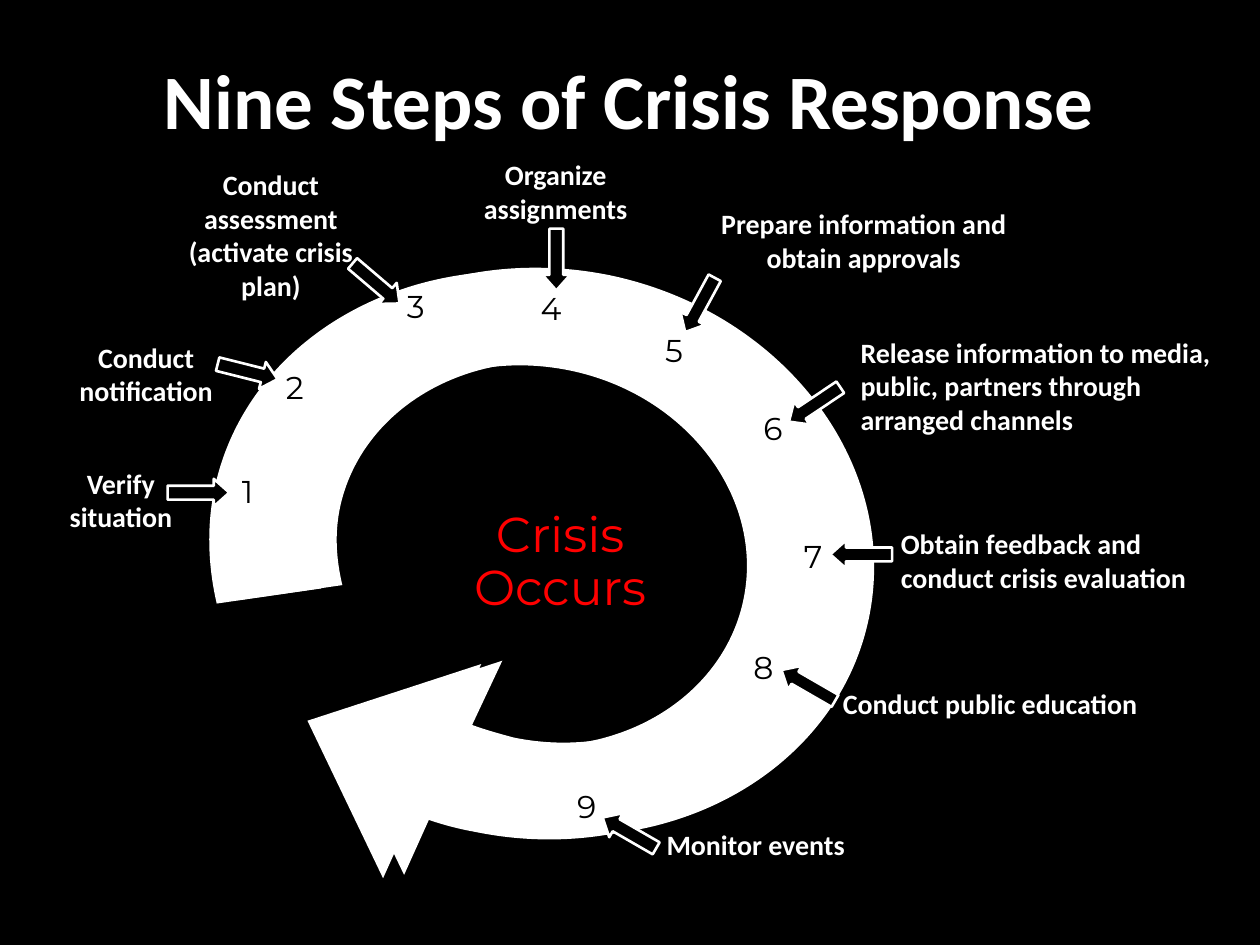
"""Build the crisis response cycle slide."""
from dataclasses import dataclass
from math import cos, radians, sin

from lxml.etree import SubElement
from pptx import Presentation
from pptx.dml.color import RGBColor
from pptx.enum.shapes import MSO_SHAPE
from pptx.enum.text import MSO_ANCHOR, MSO_AUTO_SIZE, PP_ALIGN
from pptx.oxml.ns import qn
from pptx.util import Inches, Pt

Point = tuple[float, float]
Box = tuple[float, float, float, float]


@dataclass(frozen=True)
class Theme:
    """Colours, fonts and type sizes."""

    black: RGBColor = RGBColor(0, 0, 0)
    white: RGBColor = RGBColor(255, 255, 255)
    red: RGBColor = RGBColor(255, 0, 0)
    label_font: str = "Calibri"
    number_font: str = "Montserrat"
    title: int = 44
    center: int = 28
    number: int = 18
    label: int = 16


@dataclass(frozen=True)
class Step:
    """One step: its label, number position and arrow."""

    text: str
    label: Box
    number: Point
    arrow: Point
    angle: float
    align: PP_ALIGN = PP_ALIGN.CENTER


THEME = Theme()
LEFT = PP_ALIGN.LEFT
STEPS = [
    Step("Verify situation", (0.43, 3.7, 1.06, 0.53), (1.92, 3.75), (1.33, 3.8), 0),
    Step("Conduct notification", (0.53, 2.7, 1.26, 0.53), (2.27, 2.92), (1.72, 2.84), 14.1),
    Step("Conduct assessment (activate crisis plan)", (1.41, 1.33, 1.48, 1.07),
         (3.23, 2.28), (2.74, 2.14), 40.4),
    Step("Organize assignments", (3.72, 1.25, 1.38, 0.53), (4.29, 2.29), (4.17, 1.95), 90),
    Step("Prepare information and obtain approvals", (5.71, 1.64, 2.29, 0.53),
         (5.28, 2.63), (5.31, 2.31), 118.5),
    Step("Release information to media, public, partners through arranged channels",
         (6.83, 2.66, 2.96, 0.8), (6.06, 3.25), (6.22, 3.1), 146.2, LEFT),
    Step("Obtain feedback and conduct crisis evaluation", (7.15, 4.18, 2.68, 0.53),
         (6.38, 4.26), (6.59, 4.29), 180, LEFT),
    Step("Conduct public education", (6.69, 5.45, 2.84, 0.27),
         (5.98, 5.14), (6.17, 5.33), 210, LEFT),
    Step("Monitor events", (5.29, 6.57, 2.29, 0.27), (4.58, 6.25), (4.75, 6.5), 210, LEFT),
]
CYCLE_BOX = (1.97, 1.84, 4.48, 5.14)
CYCLE_ANGLE = 101.7
CYCLE = [
    [(3.58, 5.78)],
    [(3.69, 5.82), (3.8, 5.85), (3.91, 5.88)],
    [(4.84, 6.07), (5.73, 5.57), (5.9, 4.76)],
    [(6.07, 3.95), (5.45, 3.13), (4.52, 2.94)],
    [(3.59, 2.75), (2.7, 3.25), (2.53, 4.06)],
    [(2.49, 4.26), (2.5, 4.46), (2.55, 4.67)],
    [(1.72, 4.79)],
    [(1.65, 4.49), (1.64, 4.18), (1.7, 3.89)],
    [(1.95, 2.67), (3.28, 1.93), (4.67, 2.21)],
    [(6.06, 2.5), (6.98, 3.72), (6.73, 4.93)],
    [(6.48, 6.14), (5.15, 6.89), (3.76, 6.6)],
    [(3.59, 6.57), (3.43, 6.52), (3.27, 6.46)],
    [(3.04, 6.97)], [(2.44, 5.72)], [(3.82, 5.27)],
]


def write(tf, text: str, *, size: int, font: str, color: RGBColor,
          bold: bool = False, align: PP_ALIGN = LEFT, spacing: float | None = None) -> None:
    """Put one formatted paragraph in a text frame."""
    p = tf.paragraphs[0]
    p.alignment = align
    p.line_spacing = spacing
    r = p.add_run()
    r.text = text
    r.font.size = Pt(size)
    r.font.name = font
    r.font.bold = bold
    r.font.color.rgb = color


def add_text(shapes, box: Box, text: str, *, wrap: bool = True,
             inset: bool = False, **fmt) -> None:
    """Add a text box that grows with its text."""
    tf = shapes.add_textbox(*map(Inches, box)).text_frame
    tf.word_wrap = wrap
    tf.auto_size = MSO_AUTO_SIZE.SHAPE_TO_FIT_TEXT
    if not inset:
        tf.margin_left = tf.margin_top = tf.margin_right = tf.margin_bottom = 0
    write(tf, text, **fmt)


def to_local(pt: Point) -> Point:
    """Turn a slide point into the cycle's unrotated frame."""
    left, top, width, height = CYCLE_BOX
    dx, dy = pt[0] - left - width / 2, pt[1] - top - height / 2
    a = radians(CYCLE_ANGLE)
    return dx * cos(a) + dy * sin(a) + width / 2, dy * cos(a) - dx * sin(a) + height / 2


def add_cycle(shapes) -> None:
    """Draw the curved arrow with its offset shadow."""
    corners = [tuple(map(Inches, part[-1])) for part in CYCLE]
    builder = shapes.build_freeform(*corners[0])
    builder.add_line_segments(corners[1:], close=True)
    sp = builder.convert_to_shape()
    sp.left, sp.top, sp.width, sp.height = map(Inches, CYCLE_BOX)
    sp.rotation = CYCLE_ANGLE

    outline = next(sp.element.iter(qn("a:path")))
    outline.set("w", str(sp.width))
    outline.set("h", str(sp.height))
    for node, part in zip(list(outline), CYCLE):
        if len(part) == 3:
            node.tag = qn("a:cubicBezTo")
        for old in list(node):
            node.remove(old)
        for pt in part:
            x, y = map(Inches, to_local(pt))
            SubElement(node, qn("a:pt"), x=str(x), y=str(y))

    sp.fill.solid()
    sp.fill.fore_color.rgb = THEME.white
    sp.line.fill.background()
    sp.shadow.inherit = False
    effects = sp.element.spPr.find(qn("a:effectLst"))
    shadow = SubElement(effects, qn("a:outerShdw"), dist=str(Pt(12.2)),
                        dir=str(351 * 60000), algn="ctr", rotWithShape="0")
    SubElement(shadow, qn("a:srgbClr"), val=str(THEME.white))


def add_arrow(shapes, step: Step) -> None:
    """Draw the arrow from a label to the cycle."""
    sp = shapes.add_shape(MSO_SHAPE.RIGHT_ARROW, *map(Inches, (*step.arrow, 0.49, 0.22)))
    sp.adjustments[0] = 0.5
    sp.adjustments[1] = 0.56
    sp.rotation = step.angle
    sp.fill.solid()
    sp.fill.fore_color.rgb = THEME.black
    sp.line.color.rgb = THEME.white
    sp.line.width = Pt(1.5)
    sp.shadow.inherit = False


def add_step(shapes, step: Step) -> None:
    """Group a step's label with its arrow."""
    group = shapes.add_group_shape().shapes
    add_text(group, step.label, step.text, size=THEME.label, font=THEME.label_font,
             color=THEME.white, bold=True, align=step.align)
    add_arrow(group, step)


def main() -> None:
    """Build and save the slide."""
    prs = Presentation()
    prs.slide_width, prs.slide_height = Inches(10), Inches(7.5)
    s = prs.slides.add_slide(prs.slide_layouts[5])
    s.background.fill.solid()
    s.background.fill.fore_color.rgb = THEME.black

    title = s.shapes.title
    title.left, title.top, title.width, title.height = map(Inches, (0.32, 0.16, 9.35, 1.25))
    title.text_frame.vertical_anchor = MSO_ANCHOR.MIDDLE
    write(title.text_frame, "Nine Steps of Crisis Response", size=THEME.title,
          font=THEME.label_font, color=THEME.white, bold=True, align=PP_ALIGN.CENTER)

    add_cycle(s.shapes)
    for number, step in enumerate(STEPS, 1):
        add_text(s.shapes, (*step.number, 0.17, 0.3), str(number), wrap=False,
                 size=THEME.number, font=THEME.number_font, color=THEME.black)
    add_text(s.shapes, (3.5, 4, 1.89, 0.94), "Crisis Occurs", inset=True, size=THEME.center,
             font=THEME.number_font, color=THEME.red, align=PP_ALIGN.CENTER, spacing=0.9)
    for step in STEPS:
        add_step(s.shapes, step)
    prs.save("out.pptx")


if __name__ == "__main__":
    main()
